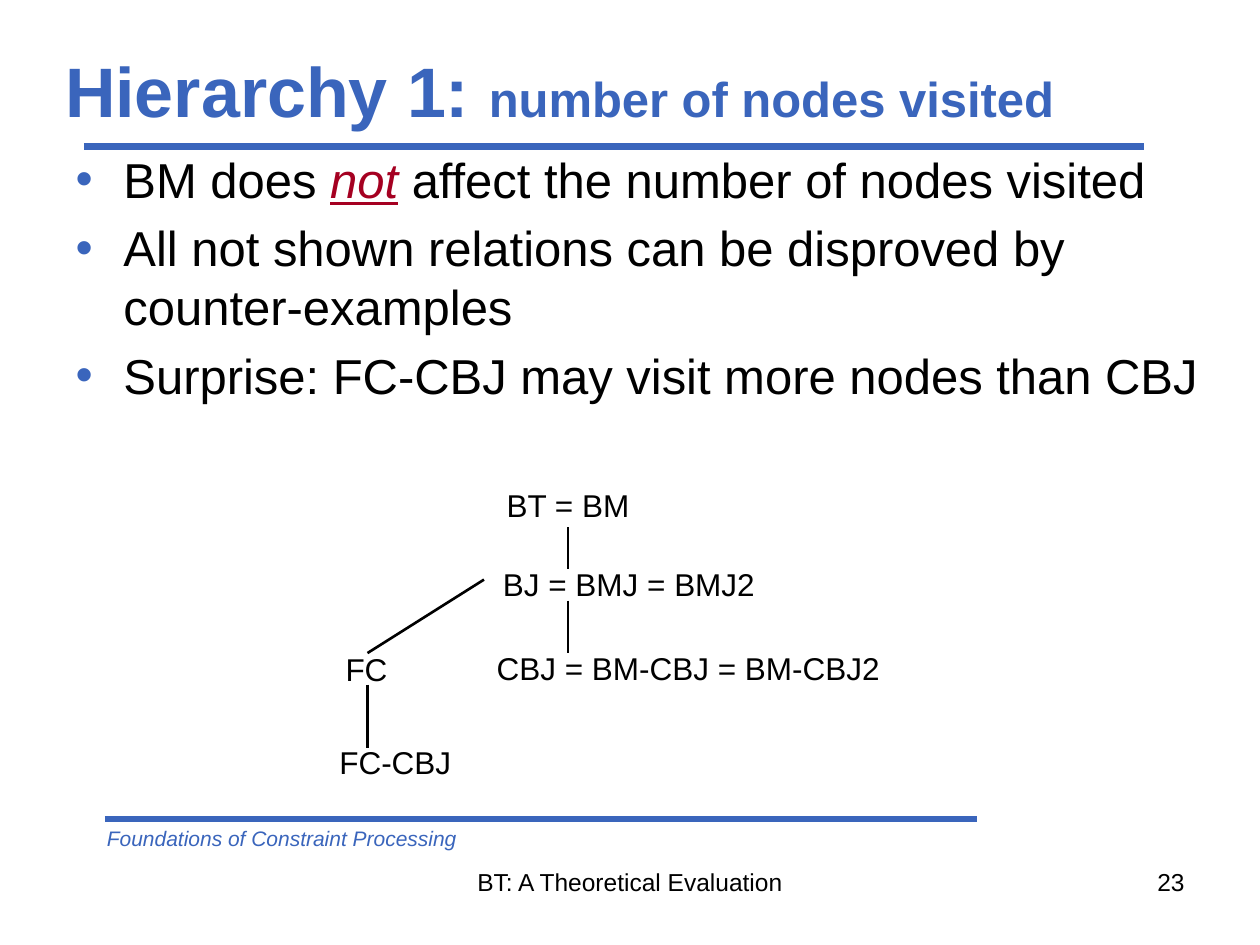
from dataclasses import dataclass

from lxml import etree
from pptx import Presentation
from pptx.dml.color import RGBColor
from pptx.enum.shapes import MSO_CONNECTOR
from pptx.enum.text import MSO_ANCHOR, MSO_AUTO_SIZE, PP_ALIGN
from pptx.oxml.ns import qn
from pptx.util import Inches, Pt

LEFT, CENTER, RIGHT = PP_ALIGN.LEFT, PP_ALIGN.CENTER, PP_ALIGN.RIGHT
TOP, MIDDLE = MSO_ANCHOR.TOP, MSO_ANCHOR.MIDDLE
STRAIGHT = MSO_CONNECTOR.STRAIGHT
NO_FIT = MSO_AUTO_SIZE.NONE

COLORS = {"blue": "3A65BC", "red": "A50021", "black": "000000"}
FONT = "Arial"
COLS, ROWS = 120, 90


@dataclass
class Box:
    col: float
    row: float
    cols: float
    rows: float


@dataclass
class Label:
    text: str
    box: Box
    size: int = 18
    color: str = "black"
    align: int = CENTER
    italic: bool = False
    wrap: bool = False


@dataclass
class Line:
    start: tuple
    end: tuple
    color: str = "black"
    width: float = 1.5


LINES = [
    Line((8, 14), (109, 14), "blue", 4),
    Line((10, 78), (93, 78), "blue", 4),
    Line((54.1, 50.2), (54.1, 54.2)),
    Line((54.1, 57.2), (54.1, 62.2)),
    Line((46.1, 55.2), (35, 62.2)),
    Line((35, 65.2), (35, 71.2)),
]

LABELS = [
    Label("Foundations of Constraint Processing", Box(9, 78, 63, 3.6), 12, "blue", LEFT, True, True),
    Label("BT: A Theoretical Evaluation", Box(41, 82, 38, 6.2), 14, wrap=True),
    Label("23", Box(86, 82, 28, 6.2), 14, align=RIGHT, wrap=True),
    Label("BT = BM", Box(47, 45.7, 14.2, 4.8)),
    Label("BJ = BMJ = BMJ2", Box(46.7, 53.2, 26.4, 4.8)),
    Label("CBJ = BM-CBJ = BM-CBJ2", Box(46.1, 61.2, 38.9, 4.8)),
    Label("FC", Box(31.7, 61.3, 6.4, 4.8)),
    Label("FC-CBJ", Box(31.1, 70.2, 13.1, 4.8)),
]

TITLE = [
    ("Hierarchy 1: ", {"size": Pt(40), "bold": True}),
    ("number of nodes visited", {"size": Pt(28), "bold": True}),
]

BULLETS = [
    [
        ("BM does ", "black", {}),
        ("not", "red", {"italic": True, "underline": True}),
        (" affect the number of nodes visited", "black", {}),
    ],
    [("All not shown relations can be disproved by counter-examples", "black", {})],
    [("Surprise: FC-CBJ may visit more nodes than CBJ", "black", {})],
]

prs = Presentation()
prs.slide_width, prs.slide_height = Inches(10), Inches(7.5)
s = prs.slides.add_slide(prs.slide_layouts[1])


def x(col: float) -> int:
    return round(prs.slide_width * col / COLS)


def y(row: float) -> int:
    return round(prs.slide_height * row / ROWS)


def place(box: Box) -> tuple:
    return x(box.col), y(box.row), x(box.cols), y(box.rows)


def apply(obj, values: dict) -> None:
    for name, value in values.items():
        setattr(obj, name, value)


def add_run(p, text: str, color: str, values: dict) -> None:
    r = p.add_run()
    r.text = text
    apply(r.font, {"name": FONT, **values})
    r.font.color.rgb = RGBColor.from_string(COLORS[color])


def add_line(line: Line) -> None:
    c = s.shapes.add_connector(STRAIGHT, x(line.start[0]), y(line.start[1]), x(line.end[0]), y(line.end[1]))
    c.line.width = Pt(line.width)
    c.line.color.rgb = RGBColor.from_string(COLORS[line.color])
    etree.SubElement(c._element.spPr, qn("a:effectLst"))


def add_label(label: Label) -> None:
    tf = s.shapes.add_textbox(*place(label.box)).text_frame
    tf.word_wrap = label.wrap
    p = tf.paragraphs[0]
    p.alignment = label.align
    add_run(p, label.text, label.color, {"size": Pt(label.size), "italic": label.italic})


def fit_placeholder(sp, box: Box, anchor: int):
    left, top, width, height = place(box)
    apply(sp, {"left": left, "top": top, "width": width, "height": height})
    tf = sp.text_frame
    apply(tf, {"word_wrap": True, "auto_size": NO_FIT, "vertical_anchor": anchor})
    return tf


def add_bullet(p) -> None:
    pPr = p._p.get_or_add_pPr()
    pPr.set("marL", str(Inches(0.38)))
    pPr.set("indent", str(Inches(-0.38)))
    clr = etree.SubElement(pPr, qn("a:buClr"))
    etree.SubElement(clr, qn("a:srgbClr"), val=COLORS["blue"])
    etree.SubElement(pPr, qn("a:buChar"), char="•")


def fill_title() -> None:
    p = fit_placeholder(s.shapes.title, Box(5, 4, 108, 9), MIDDLE).paragraphs[0]
    p.alignment = LEFT
    for text, values in TITLE:
        add_run(p, text, "blue", values)


def fill_body() -> None:
    tf = fit_placeholder(s.placeholders[1], Box(6, 13.6, 112, 26.4), TOP)
    for i, runs in enumerate(BULLETS):
        p = tf.add_paragraph() if i else tf.paragraphs[0]
        p.space_before = Pt(5.6 if i else 0)
        add_bullet(p)
        for text, color, values in runs:
            add_run(p, text, color, {"size": Pt(28), **values})


fill_title()
fill_body()
for label in LABELS:
    add_label(label)
for line in LINES:
    add_line(line)
prs.save("out.pptx")
